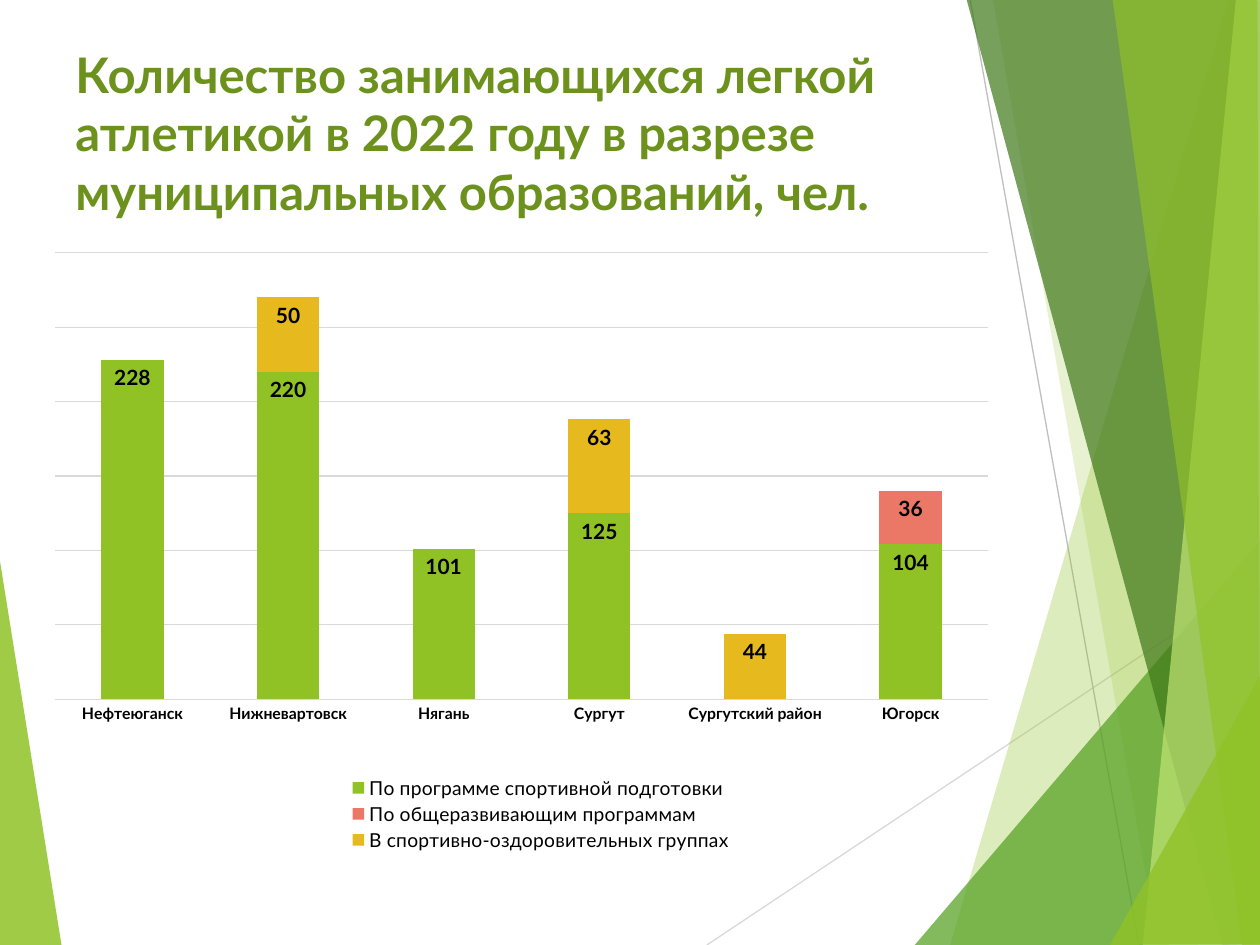
from lxml import etree
from pptx import Presentation
from pptx import util as u
from pptx.chart import data
from pptx.dml import color
from pptx.enum import chart as charts, shapes, text
from pptx.oxml import ns

FONT = "Lato"
COLORS = {
    "lime": "90C226", "green": "54A021", "forest": "3F7819", "pale": "C0E474",
    "title": "6C921D", "coral": "EB7766", "gold": "E6B91E",
    "black": "000000", "grid": "D9D9D9", "ray": "BFBFBF",
}
RAYS = [
    ((5.61, 7.5), (10.01, 4.57), "grid"),
    ((7.7, 0), (9.04, 7.5), "ray"),
]
FACETS = [
    ([(-0.01, 4.39), (0.49, 7.51), (-0.01, 7.5)], "lime", 85),
    ([(9.75, 0), (7.54, 7.5), (10.02, 7.51), (10.01, 0.01)], "lime", 30),
    ([(7.88, -0.01), (9.19, 7.5), (10.01, 7.5), (10.01, -0.01)], "lime", 20),
    ([(7.26, 7.5), (10, 4.29), (10.01, 7.5)], "green", 72),
    ([(7.67, -0.01), (9.7, 7.5), (10.01, 7.49), (10.01, -0.01)], "forest", 70),
    ([(9.81, -0.01), (9.07, 7.5), (10.01, 7.5), (10, -0.01)], "pale", 70),
    ([(8.83, -0.01), (9.86, 7.5), (10, 7.5), (9.98, -0.01)], "lime", 65),
    ([(8.81, 7.5), (10.01, 5.35), (10.01, 7.49)], "lime", 80),
]
CITIES = ["Нефтеюганск", "Нижневартовск", "Нягань", "Сургут", "Сургутский район", "Югорск"]
SERIES = [
    ("По программе спортивной подготовки", [228, 220, 101, 125, None, 104], "lime"),
    ("По общеразвивающим программам", [None, None, None, None, None, 36], "coral"),
    ("В спортивно-оздоровительных группах", [None, 50, None, 63, 44, None], "gold"),
]


def rgb(name):
    """Return the named colour."""
    return color.RGBColor.from_string(COLORS[name])


def style_font(font, size, bold=False, color_name="black"):
    """Set the face, size, weight and colour of a font."""
    font.name = FONT
    font.size = u.Pt(size)
    font.bold = bold
    font.color.rgb = rgb(color_name)


def style_line(line, color_name):
    """Make a line thin and coloured."""
    line.color.rgb = rgb(color_name)
    line.width = u.Pt(0.75)


def add_facet(slide, points, color_name, opacity):
    """Draw one translucent polygon."""
    corners = [(u.Inches(x), u.Inches(y)) for x, y in points]
    builder = slide.shapes.build_freeform(*corners[0])
    builder.add_line_segments(corners[1:], close=True)
    shape = builder.convert_to_shape()
    shape.shadow.inherit = False
    shape.line.fill.background()
    shape.fill.solid()
    shape.fill.fore_color.rgb = rgb(color_name)
    fill_color = shape.fill._xPr.find(".//" + ns.qn("a:srgbClr"))
    etree.SubElement(fill_color, ns.qn("a:alpha"), val=str(opacity * 1000))


def add_ray(slide, start, end, color_name):
    """Draw one thin straight line."""
    ends = [u.Inches(length) for length in start + end]
    connector = slide.shapes.add_connector(shapes.MSO_CONNECTOR.STRAIGHT, *ends)
    style_line(connector.line, color_name)
    etree.SubElement(connector._element.spPr, ns.qn("a:effectLst"))


def add_background(slide):
    """Draw the facets and the rays that cross them."""
    add_facet(slide, *FACETS[0])
    for ray in RAYS:
        add_ray(slide, *ray)
    for facet in FACETS[1:]:
        add_facet(slide, *facet)


def add_title(slide, left, top, width, height):
    """Place the title in its box."""
    shape = slide.shapes.add_textbox(left, top, width, height)
    frame = shape.text_frame
    frame.word_wrap = True
    frame.vertical_anchor = text.MSO_ANCHOR.TOP
    run = frame.paragraphs[0].add_run()
    run.text = ("Количество занимающихся легкой атлетикой в 2022 году "
                "в разрезе муниципальных образований, чел.")
    style_font(run.font, 28, True, "title")


def set_layout(parent, index, x, y, w, h, inner=False):
    """Fix a chart part at fractions of the chart area."""
    for old in parent.findall(ns.qn("c:layout")):
        parent.remove(old)
    layout = etree.Element(ns.qn("c:layout"))
    manual = etree.SubElement(layout, ns.qn("c:manualLayout"))
    values = {"layoutTarget": "inner"} if inner else {}
    values.update(xMode="edge", yMode="edge", x=x, y=y, w=w, h=h)
    for tag, value in values.items():
        etree.SubElement(manual, ns.qn("c:" + tag), val=str(value))
    parent.insert(index, layout)


def style_axes(chart):
    """Style the category axis and the gridlines."""
    categories = chart.category_axis
    categories.major_tick_mark = charts.XL_TICK_MARK.NONE
    style_font(categories.tick_labels.font, 9, True)
    style_line(categories.format.line, "grid")
    values = chart.value_axis
    values.visible = False
    values.minimum_scale, values.maximum_scale, values.major_unit = 0, 300, 50
    values.has_major_gridlines = True
    style_line(values.major_gridlines.format.line, "grid")


def add_athletes_chart(slide, left, top, width, height):
    """Place the stacked column chart in its box."""
    chart_data = data.CategoryChartData()
    chart_data.categories = CITIES
    for name, values, _ in SERIES:
        chart_data.add_series(name, values)
    chart = slide.shapes.add_chart(
        charts.XL_CHART_TYPE.COLUMN_STACKED, left, top, width, height, chart_data).chart
    chart.has_title = False
    style_font(chart.font, 10)
    style_axes(chart)
    plot = chart.plots[0]
    plot.vary_by_categories = False
    plot.gap_width, plot.overlap = 150, 100
    for series, (_, _, color_name) in zip(plot.series, SERIES):
        series.format.fill.solid()
        series.format.fill.fore_color.rgb = rgb(color_name)
        labels = series.data_labels
        labels.show_value = True
        labels.position = charts.XL_LABEL_POSITION.INSIDE_END
        style_font(labels.font, 12, True)
    chart.has_legend = True
    chart.legend.position = charts.XL_LEGEND_POSITION.BOTTOM
    chart.legend.include_in_layout = False
    style_font(chart.legend.font, 11)
    plot_area = chart._chartSpace.find(".//" + ns.qn("c:plotArea"))
    set_layout(plot_area, 0, 0.02, 0.03, 0.96, 0.72, inner=True)
    set_layout(chart.legend._element, 1, 0.32, 0.87, 0.4, 0.13)


def main():
    """Build and save the slide."""
    presentation = Presentation()
    presentation.slide_width = u.Inches(10)
    presentation.slide_height = u.Inches(7.5)
    slide = presentation.slides.add_slide(presentation.slide_layouts[6])
    add_background(slide)
    add_title(slide, u.Inches(0.5), u.Inches(0.3), u.Inches(7.49), u.Inches(1.25))
    add_athletes_chart(slide, u.Inches(0.28), u.Inches(1.86), u.Inches(7.72), u.Inches(4.92))
    presentation.save("out.pptx")


if __name__ == "__main__":
    main()
